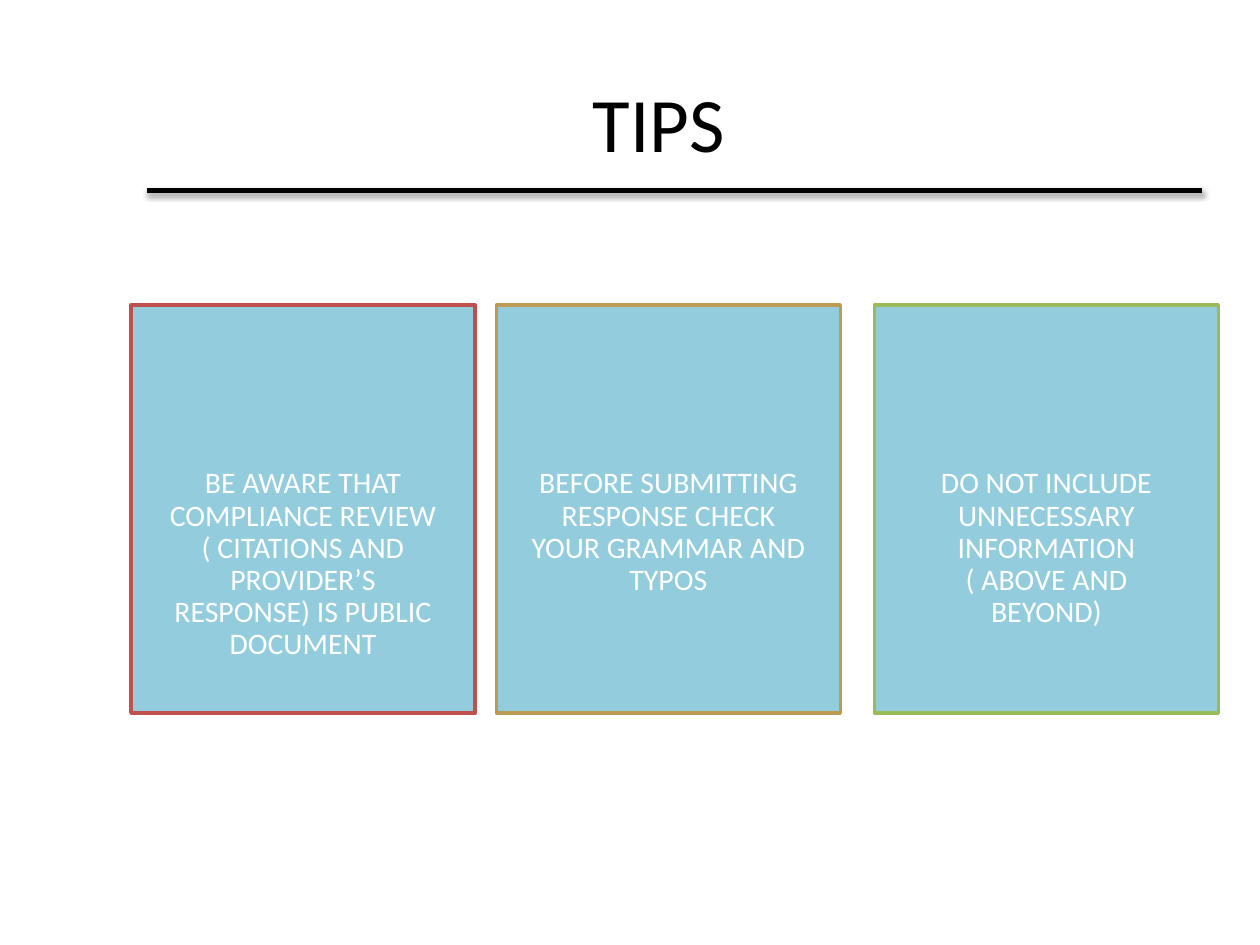
from lxml.etree import SubElement
from pptx import Presentation
from pptx.dml.color import RGBColor as Rgb
from pptx.enum.shapes import MSO_CONNECTOR as Link, MSO_SHAPE as Shape
from pptx.enum.text import MSO_ANCHOR as Anchor, PP_ALIGN as Align
from pptx.oxml.ns import qn
from pptx.util import Inches, Pt

COLS, ROWS = 100, 75
HUES = {
    "ink": "000000", "paper": "FFFFFF", "card": "93CDDD",
    "red": "C0504D", "tan": "BD9B53", "green": "9BBB59",
}
TIPS = [
    (10.4, "red", "BE AWARE THAT COMPLIANCE REVIEW ( CITATIONS AND "
                  "PROVIDER’S RESPONSE) IS PUBLIC DOCUMENT"),
    (39.4, "tan", "BEFORE SUBMITTING RESPONSE CHECK YOUR GRAMMAR AND TYPOS"),
    (69.4, "green", "DO NOT INCLUDE UNNECESSARY INFORMATION ( ABOVE AND BEYOND)"),
]
CARD_TOP, CARD_WIDE, CARD_HIGH = 24.2, 27.3, 32.4
TEXT_DROP = 0.4  # share of the card's height above its text


class Deck:
    """Holds the style and the current slide; lengths are grid columns and rows."""

    font = "Calibri"

    def __init__(self):
        self.prs = Presentation()
        self.prs.slide_width, self.prs.slide_height = Inches(10), Inches(7.5)
        self.slide = self.prs.slides.add_slide(self.prs.slide_layouts[6])

    def grid(self, *cells):
        """Turn alternating columns and rows into lengths."""
        sides = (self.prs.slide_width / COLS, self.prs.slide_height / ROWS)
        return [round(cell * sides[i % 2]) for i, cell in enumerate(cells)]

    def hue(self, name):
        return Rgb.from_string(HUES[name])

    def text(self, words, cells, size, hue, frame, space=1.0):
        body = self.slide.shapes.add_textbox(*self.grid(*cells)).text_frame
        for key, value in {"word_wrap": True, **frame}.items():
            setattr(body, key, value)
        para = body.paragraphs[0]
        para.text = words
        para.alignment, para.line_spacing = Align.CENTER, space
        for key, value in {"name": self.font, "size": Pt(size)}.items():
            setattr(para.font, key, value)
        para.font.color.rgb = self.hue(hue)

    def box(self, cells, fill, edge):
        box = self.slide.shapes.add_shape(Shape.RECTANGLE, *self.grid(*cells))
        box.shadow.inherit = False
        box.fill.solid()
        box.fill.fore_color.rgb = self.hue(fill)
        box.line.color.rgb = self.hue(edge)
        box.line.width = Pt(2)

    def rule(self, cells, hue, width):
        """Draw a straight line with a soft shadow below it."""
        rule = self.slide.shapes.add_connector(Link.STRAIGHT, *self.grid(*cells))
        rule.line.color.rgb = self.hue(hue)
        rule.line.width = Pt(width)
        props = rule._element.spPr
        shade = SubElement(
            SubElement(props, qn("a:effectLst")), qn("a:outerShdw"),
            blurRad=str(Pt(3.1)), dist=str(Pt(1.8)), dir="5400000", rotWithShape="0")
        tint = SubElement(shade, qn("a:srgbClr"), val=HUES[hue])
        SubElement(tint, qn("a:alpha"), val="35000")

    def card(self, left, edge, words):
        self.box((left, CARD_TOP, CARD_WIDE, CARD_HIGH), "card", edge)
        drop = CARD_HIGH * TEXT_DROP
        inset = {
            "margin_left": Inches(0.27), "margin_right": Inches(0.27),
            "margin_top": 0, "margin_bottom": Inches(0.36),
            "vertical_anchor": Anchor.TOP,
        }
        self.text(words, (left, CARD_TOP + drop, CARD_WIDE, CARD_HIGH - drop),
                  17, "paper", inset, 0.9)


def main():
    deck = Deck()
    deck.text("TIPS", (9.2, 4.2, 86.2, 10.9), 44, "ink",
              {"vertical_anchor": Anchor.MIDDLE})
    for tip in TIPS:
        deck.card(*tip)
    deck.rule((11.7, 15.1, 95.4, 15.1), "ink", 3)
    deck.prs.save("out.pptx")


if __name__ == "__main__":
    main()
